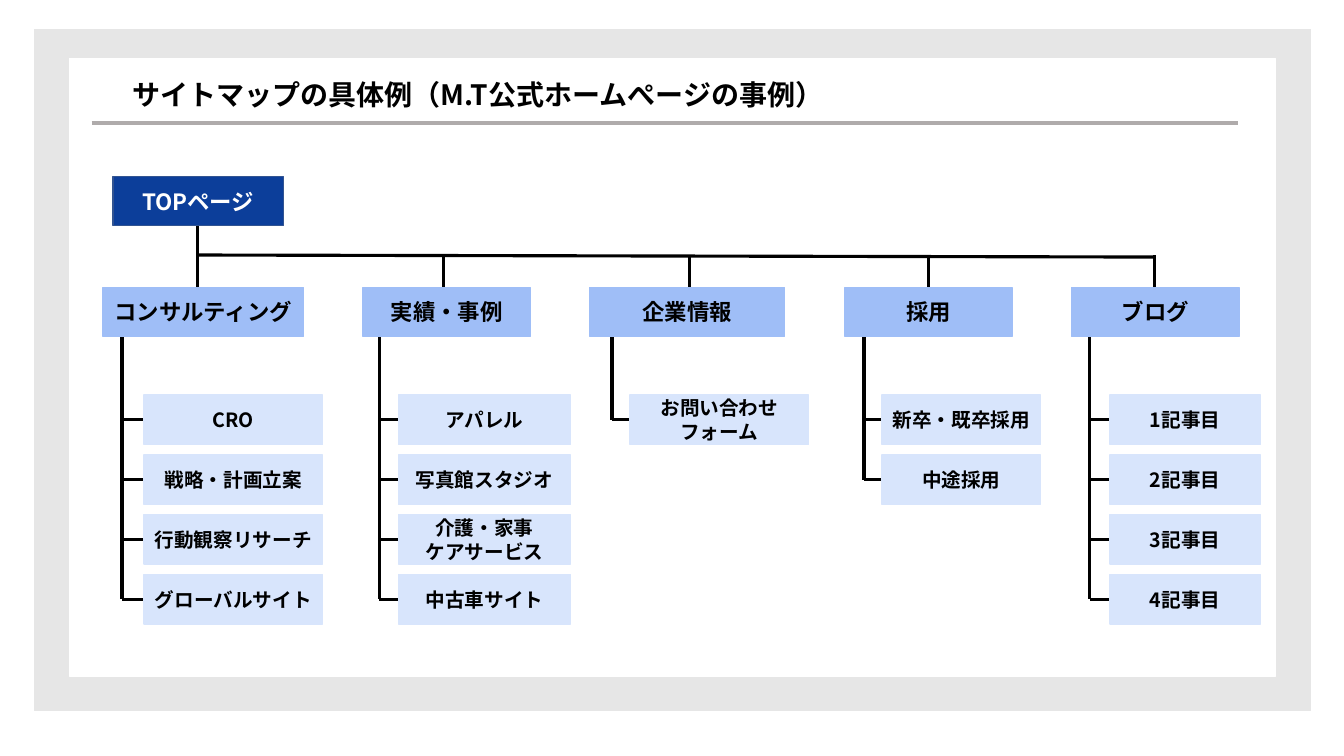
from dataclasses import dataclass

from pptx import Presentation
from pptx.dml.color import RGBColor
from pptx.enum import lang, shapes, text
from pptx.oxml.ns import qn
from pptx.slide import Slide
from pptx.text.text import _Paragraph
from pptx import util as u


@dataclass(frozen=True)
class Theme:
    font: str = "Noto Sans CJK JP"
    black: str = "000000"
    white: str = "FFFFFF"
    frame: str = "E6E6E6"
    rule: str = "AFABAB"
    top: str = "0C3E9A"
    top_line: str = "325491"
    branch: str = "9FBEF7"
    item: str = "D8E5FC"
    title_size: float = 20
    branch_size: float = 16
    item_size: float = 14
    line_width: float = 2.25
    rule_width: float = 3


@dataclass(frozen=True)
class Box:
    left: float
    top: float
    width: float
    height: float
    fill: str
    line: str
    label: str = ""
    size: float = 14
    color: str = "000000"


@dataclass(frozen=True)
class Branch:
    label: str
    left: float
    width: float
    drop_x: float
    trunk_x: float
    item_left: float
    item_width: float
    items: tuple[str, ...]


T = Theme()
BOX_H = 0.49
TOP_Y = 1.75
BUS_Y, BUS_END_Y = 2.53, 2.55
BRANCH_Y = 2.85
ITEM_Y, LAST_ITEM_Y = 3.92, 5.7
PITCH = (LAST_ITEM_Y - ITEM_Y) / 3

BRANCHES = (
    Branch("コンサルティング", 1.02, 1.99, 1.96, 1.21, 1.43, 1.77,
           ("CRO", "戦略・計画立案", "行動観察リサーチ", "グローバルサイト")),
    Branch("実績・事例", 3.6, 1.66, 4.4, 3.76, 3.95, 1.71,
           ("アパレル", "写真館スタジオ", "介護・家事\nケアサービス", "中古車サイト")),
    Branch("企業情報", 5.85, 1.93, 6.84, 6.07, 6.25, 1.77,
           ("お問い合わせフォーム",)),
    Branch("採用", 8.38, 1.66, 9.21, 8.57, 8.75, 1.57,
           ("新卒・既卒採用", "中途採用")),
    Branch("ブログ", 10.63, 1.66, 11.45, 10.81, 11.01, 1.49,
           ("1記事目", "2記事目", "3記事目", "4記事目")),
)


def format_text(p: _Paragraph, size: float, color: str, align: text.PP_ALIGN) -> None:
    p.alignment = align
    for r in p.runs:
        values = {"name": T.font, "size": u.Pt(size), "bold": True,
                  "language_id": lang.MSO_LANGUAGE_ID.JAPANESE}
        for name, value in values.items():
            setattr(r.font, name, value)
        r.font.color.rgb = RGBColor.from_string(color)
        ea = r._r.get_or_add_rPr().makeelement(qn("a:ea"), {"typeface": T.font})
        r._r.rPr.find(qn("a:latin")).addnext(ea)


def draw_box(s: Slide, box: Box) -> None:
    sp = s.shapes.add_shape(shapes.MSO_SHAPE.RECTANGLE, u.Inches(box.left),
                            u.Inches(box.top), u.Inches(box.width), u.Inches(box.height))
    sp.shadow.inherit = False
    sp.fill.solid()
    sp.fill.fore_color.rgb = RGBColor.from_string(box.fill)
    sp.line.color.rgb = RGBColor.from_string(box.line)
    sp.line.width = u.Pt(1)
    if box.label:
        tf = sp.text_frame
        tf.word_wrap = True
        tf.vertical_anchor = text.MSO_ANCHOR.MIDDLE
        tf.text = box.label
        for p in tf.paragraphs:
            format_text(p, box.size, box.color, text.PP_ALIGN.CENTER)


def draw_line(s: Slide, x1: float, y1: float, x2: float, y2: float,
              color: str = T.black, width: float = T.line_width) -> None:
    cx = s.shapes.add_connector(shapes.MSO_CONNECTOR.STRAIGHT, u.Inches(x1),
                                u.Inches(y1), u.Inches(x2), u.Inches(y2))
    cx.line.color.rgb = RGBColor.from_string(color)
    cx.line.width = u.Pt(width)
    sp_pr = cx._element.spPr
    sp_pr.append(sp_pr.makeelement(qn("a:effectLst"), {}))


def draw_title(s: Slide, label: str) -> None:
    sp = s.shapes.title
    geometry = {"left": 1.21, "top": 0.72, "width": 9.86, "height": 0.44}
    for name, value in geometry.items():
        setattr(sp, name, u.Inches(value))
    tf = sp.text_frame
    tf.text = label
    values = {"word_wrap": True, "auto_size": text.MSO_AUTO_SIZE.NONE,
              "vertical_anchor": text.MSO_ANCHOR.TOP}
    for name, value in values.items():
        setattr(tf, name, value)
    format_text(tf.paragraphs[0], T.title_size, T.black, text.PP_ALIGN.LEFT)
    s.shapes._spTree.append(sp._element)


def draw_branch(s: Slide, b: Branch) -> None:
    draw_line(s, b.drop_x, BUS_Y, b.drop_x, BRANCH_Y)
    centers = [ITEM_Y + i * PITCH + BOX_H / 2 for i in range(len(b.items))]
    draw_line(s, b.trunk_x, BRANCH_Y + BOX_H, b.trunk_x, centers[-1])
    draw_box(s, Box(b.left, BRANCH_Y, b.width, BOX_H, T.branch, T.branch,
                    b.label, T.branch_size))
    for label, y in zip(b.items, centers):
        draw_line(s, b.trunk_x, y, b.item_left, y)
        draw_box(s, Box(b.item_left, y - BOX_H / 2, b.item_width, BOX_H,
                        T.item, T.item, label, T.item_size))


def main() -> None:
    prs = Presentation()
    prs.slide_width, prs.slide_height = u.Inches(13.33), u.Inches(7.5)
    s = prs.slides.add_slide(prs.slide_layouts[5])
    draw_box(s, Box(0.34, 0.29, 12.66, 6.76, T.frame, T.frame))
    draw_box(s, Box(0.69, 0.58, 11.96, 6.13, T.white, T.white))
    draw_title(s, "サイトマップの具体例（M.T公式ホームぺージの事例）")
    draw_line(s, 0.91, 1.22, 12.28, 1.22, T.rule, T.rule_width)
    first, last = BRANCHES[0], BRANCHES[-1]
    draw_line(s, first.drop_x, TOP_Y + BOX_H, first.drop_x, BUS_Y)
    draw_line(s, first.drop_x, BUS_Y, last.drop_x, BUS_END_Y)
    draw_box(s, Box(1.12, TOP_Y, 1.69, BOX_H, T.top, T.top_line,
                    "TOPページ", T.branch_size, T.white))
    for b in BRANCHES:
        draw_branch(s, b)
    prs.save("out.pptx")


if __name__ == "__main__":
    main()
